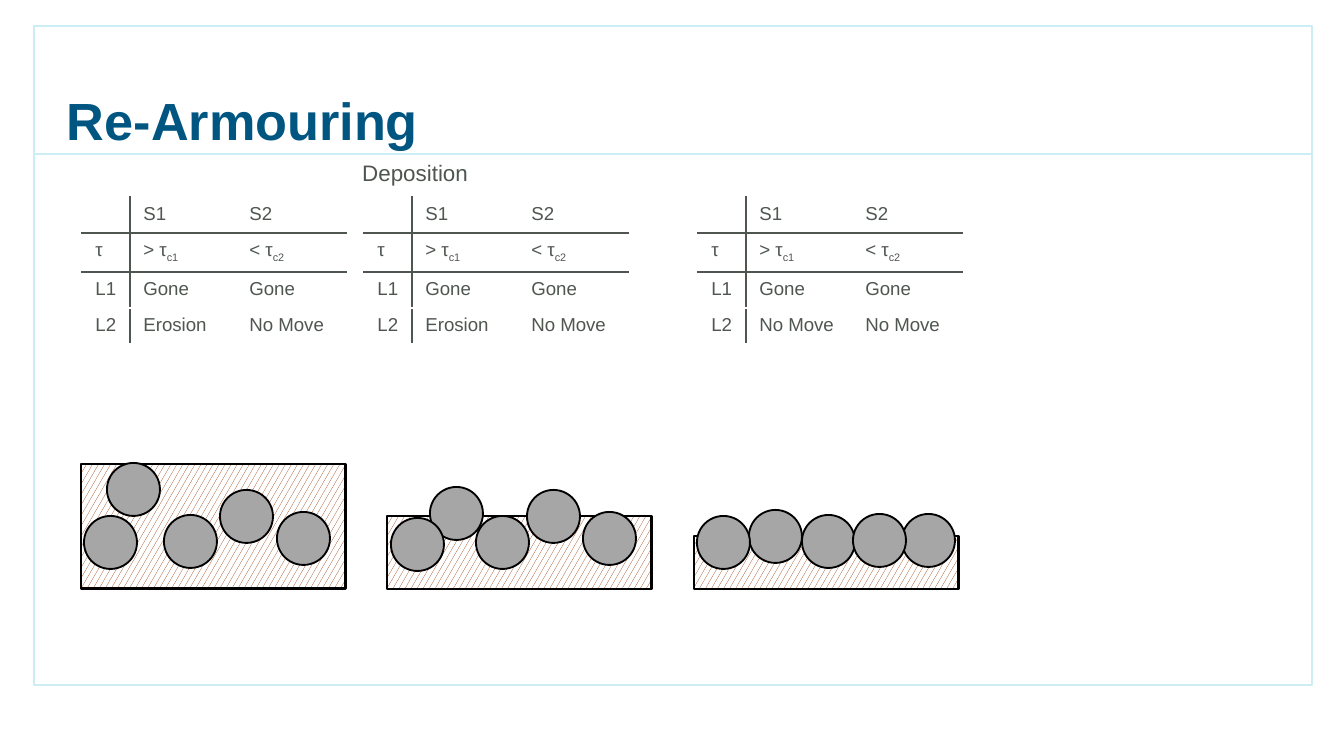
from lxml import etree
from pptx import Presentation
from pptx.dml.color import RGBColor
from pptx.enum.dml import MSO_PATTERN
from pptx.enum.shapes import MSO_CONNECTOR, MSO_SHAPE
from pptx.enum.text import MSO_ANCHOR, MSO_AUTO_SIZE, PP_ALIGN
from pptx.oxml.ns import qn
from pptx.util import Emu, Pt

RECT, OVAL = MSO_SHAPE.RECTANGLE, MSO_SHAPE.OVAL
STRAIGHT = MSO_CONNECTOR.STRAIGHT
HATCH = MSO_PATTERN.LARGE_CONFETTI
BOTTOM, LEFT = MSO_ANCHOR.BOTTOM, PP_ALIGN.LEFT
FIXED = MSO_AUTO_SIZE.NONE

WIDTH, HEIGHT = 1344, 756
SCALE = 9144000 / WIDTH
FONT = "Arial"
COLORS = {
    "frame": "CBEDF3", "title": "005581", "text": "4F5650",
    "black": "000000", "white": "FFFFFF", "stone": "A6A6A6", "sand": "943400",
}

COLS, ROWS = (48, 106, 110), (36, 39, 36, 36)
TABLE_TOP = 197
# Left edge of each table, and the fate of S1 in layer L2
TABLES = [(82, "Erosion"), (364, "Erosion"), (698, "No Move")]

BED_WIDTH, BED_BASE, STONE = 265, 589, 53
# Left and top of each bed, and of the stones in it
BEDS = [
    (81, 464, [(164, 515), (277, 512), (107, 463), (84, 516), (220, 490)]),
    (387, 516, [(476, 516), (583, 512), (430, 487), (391, 518), (527, 490)]),
    (694, 536, [(802, 515), (902, 514), (749, 510), (697, 516), (853, 514)]),
]


def px(n):
    return Emu(round(n * SCALE))


def color(name):
    return RGBColor.from_string(COLORS[name])


def style(para, size, name, bold=False):
    para.alignment = LEFT
    font = para.font
    font.name, font.size, font.bold = FONT, Pt(size), bold
    font.color.rgb = color(name)


def stroke(item, name, width):
    item.line.color.rgb = color(name)
    item.line.width = Pt(width)


def add_shape(slide, kind, box, name, width):
    shape = slide.shapes.add_shape(kind, *map(px, box))
    shape.shadow.inherit = False
    stroke(shape, name, width)
    return shape


def add_frame(slide):
    add_shape(slide, RECT, (34, 26, 1278, 659), "frame", 1).fill.background()
    rule = slide.shapes.add_connector(STRAIGHT, *map(px, (34, 154, 1312, 154)))
    stroke(rule, "frame", 1)
    etree.SubElement(rule._element.spPr, qn("a:effectLst"))


def set_title(slide, text):
    title = slide.shapes.title
    title.left, title.top, title.width, title.height = map(px, (67, 34, 1210, 117))
    frame = title.text_frame
    frame.margin_left = frame.margin_right = 0
    frame.margin_top = frame.margin_bottom = 0
    frame.vertical_anchor, frame.auto_size = BOTTOM, FIXED
    frame.text = text
    style(frame.paragraphs[0], 28, "title", True)


def add_label(slide, box, text):
    frame = slide.shapes.add_textbox(*map(px, box)).text_frame
    frame.word_wrap = True
    frame.text = text
    style(frame.paragraphs[0], 12, "text")


def add_edge(cell, side):
    props = cell._tc.get_or_add_tcPr()
    line = etree.SubElement(props, qn(f"a:ln{side}"), w=str(Pt(1)))
    fill = etree.SubElement(line, qn("a:solidFill"))
    etree.SubElement(fill, qn("a:srgbClr"), val=COLORS["text"])


def fill_cell(cell, text, sides):
    for side in sides:
        add_edge(cell, side)
    cell.fill.background()
    para = cell.text_frame.paragraphs[0]
    style(para, 10, "text")
    # An underscore marks the start of a subscript
    main, _, sub = text.partition("_")
    if main:
        para.add_run().text = main
    else:
        etree.SubElement(para._p, qn("a:endParaRPr"), sz="1000")
    if sub:
        run = para.add_run()
        run.text = sub
        run._r.get_or_add_rPr().set("baseline", "-25000")


def add_grid(slide, left, fate):
    cells = [
        ("", "S1", "S2"),
        ("τ", "> τ_c1", "< τ_c2"),
        ("L1", "Gone", "Gone"),
        ("L2", fate, "No Move"),
    ]
    box = (left, TABLE_TOP, sum(COLS), sum(ROWS))
    table = slide.shapes.add_table(len(ROWS), len(COLS), *map(px, box)).table
    table.first_row = table.horz_banding = False
    for col, width in zip(table.columns, COLS):
        col.width = px(width)
    for row, height in zip(table.rows, ROWS):
        row.height = px(height)
    for r, line in enumerate(cells):
        for c, text in enumerate(line):
            sides = ("R", "L", "")[c] + ("B", "TB", "T", "")[r]
            fill_cell(table.cell(r, c), text, sides)


def add_bed(slide, left, top, stones):
    box = (left, top, BED_WIDTH, BED_BASE - top)
    bed = add_shape(slide, RECT, box, "black", 1.5)
    bed.fill.patterned()
    bed.fill.pattern = HATCH
    bed.fill.fore_color.rgb = color("sand")
    bed.fill.back_color.rgb = color("white")
    for x, y in stones:
        stone = add_shape(slide, OVAL, (x, y, STONE, STONE), "black", 1)
        stone.fill.solid()
        stone.fill.fore_color.rgb = color("stone")


def main():
    deck = Presentation()
    deck.slide_width, deck.slide_height = px(WIDTH), px(HEIGHT)
    slide = deck.slides.add_slide(deck.slide_layouts.get_by_name("Title Only"))

    # Frame and headings
    add_frame(slide)
    set_title(slide, "Re-Armouring")
    add_label(slide, (349, 153, 286, 40), "Deposition")

    # Tables of movement by layer
    for left, fate in TABLES:
        add_grid(slide, left, fate)

    # River beds with stones
    for left, top, stones in BEDS:
        add_bed(slide, left, top, stones)

    deck.save("out.pptx")


if __name__ == "__main__":
    main()
